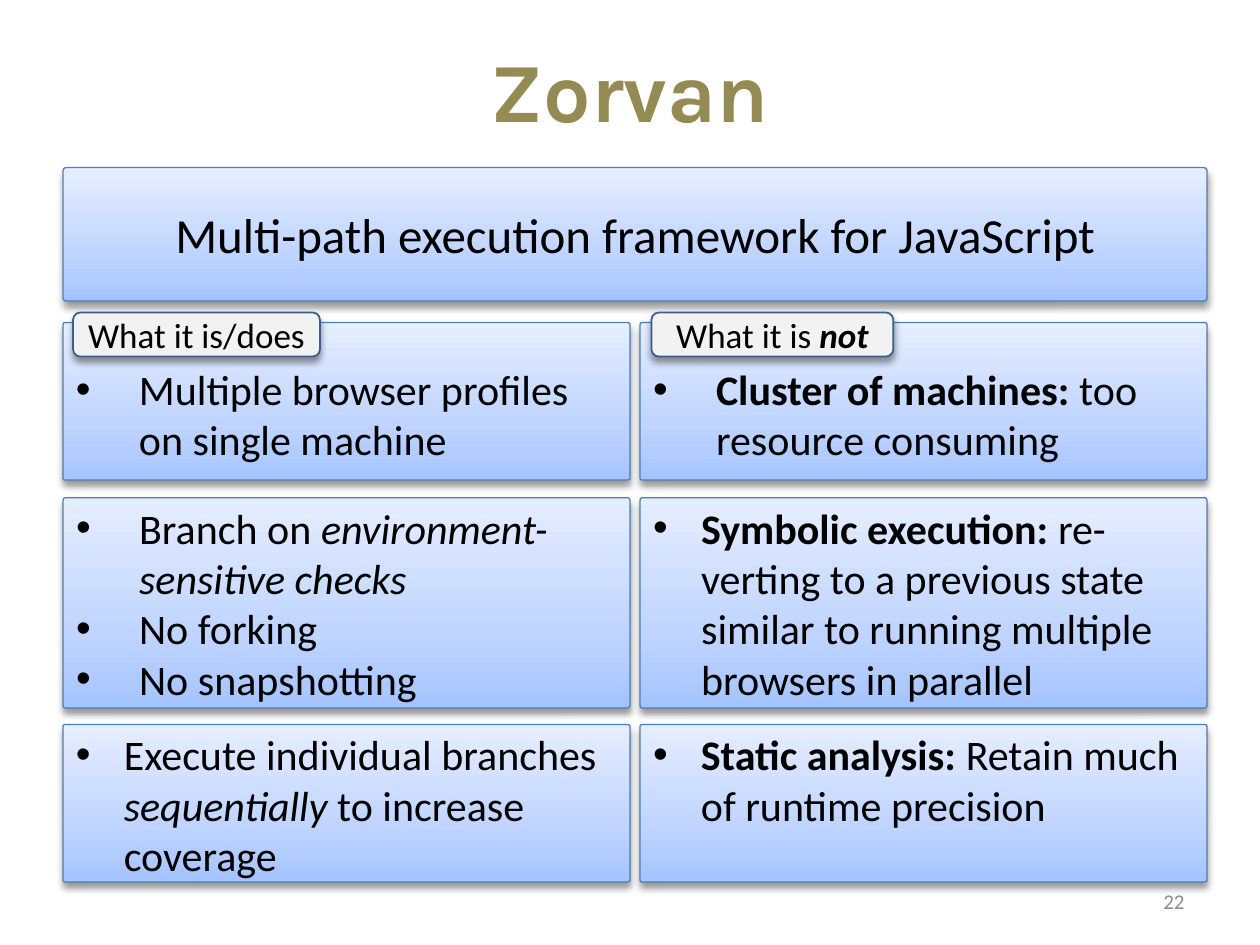
"""Build the Zorvan overview slide: a banner above two columns of cards."""
import pptx
import pptx.dml.color
import pptx.enum.shapes
import pptx.enum.text
import pptx.oxml
import pptx.oxml.ns
import pptx.util

Inches = pptx.util.Inches
Pt = pptx.util.Pt
RGBColor = pptx.dml.color.RGBColor
ALIGN = pptx.enum.text.PP_ALIGN
ANCHOR = pptx.enum.text.MSO_ANCHOR

BLACK = RGBColor(0x00, 0x00, 0x00)
OLIVE = RGBColor(0x94, 0x8A, 0x54)
GRAY = RGBColor(0x8C, 0x8C, 0x8C)
CARD_LINE = RGBColor(0x4B, 0x7E, 0xBC)
TAB_FILL = RGBColor(0xF2, 0xF2, 0xF2)
TAB_LINE = RGBColor(0x3A, 0x5F, 0x8C)
CARD_STOPS = [(0, RGBColor(0xA4, 0xC4, 0xFF)), (35, RGBColor(0xBF, 0xD4, 0xFF)),
              (100, RGBColor(0xE6, 0xEE, 0xFF))]

TITLE = [[("Zorvan", "b")]]
BANNER = [[("Multi-path execution framework for JavaScript", "")]]
TABS = [
    ([[("What it is/does", "")]], 0.58, 1.96),
    ([[("What it is ", ""), ("not", "bi")]], 5.17, 1.92),
]
COLUMN_LEFTS = [0.5, 5.08]
CARD_WIDTH = 4.5
ROWS = [
    {"top": 2.56, "height": 1.25, "inset": 0.3, "cards": [
        (0.5, [[("Multiple browser profiles on single machine", "")]]),
        (0.5, [[("Cluster of machines:", "b"), (" too resource consuming", "")]]),
    ]},
    {"top": 3.95, "height": 1.67, "inset": 0.1, "cards": [
        (0.5, [[("Branch on ", ""), ("environment-sensitive checks", "i")],
               [("No forking", "")],
               [("No snapshotting", "")]]),
        (0.38, [[("Symbolic execution:", "b"),
                 (" re-verting to a previous state similar to running "
                  "multiple browsers in parallel", "")]]),
    ]},
    {"top": 5.75, "height": 1.25, "inset": 0.03, "anchor": ANCHOR.TOP, "cards": [
        (0.38, [[("Execute individual branches ", ""), ("sequentially", "i"),
                 (" to increase coverage", "")]]),
        (0.38, [[("Static analysis:", "b"), (" Retain much of runtime precision", "")]]),
    ]},
]


def parse_drawing(xml):
    namespace = pptx.oxml.ns.nsdecls("a")
    return pptx.oxml.parse_xml(xml.replace(">", f" {namespace}>", 1))


def write_text(shape, paragraphs, size, color=BLACK, font="Calibri", align=ALIGN.CENTER,
               anchor=ANCHOR.MIDDLE, insets=(0.1, 0.05, 0.1, 0.05), indent=None, wrap=True):
    frame = shape.text_frame
    frame.word_wrap = wrap
    frame.vertical_anchor = anchor
    (frame.margin_left, frame.margin_top,
     frame.margin_right, frame.margin_bottom) = map(Inches, insets)
    for index, runs in enumerate(paragraphs):
        paragraph = frame.add_paragraph() if index else frame.paragraphs[0]
        paragraph.alignment = align
        paragraph.font.size = Pt(size)
        paragraph.font.name = font
        paragraph.font.color.rgb = color
        for text, style in runs:
            run = paragraph.add_run()
            run.text = text
            if "b" in style:
                run.font.bold = True
            if "i" in style:
                run.font.italic = True
        if indent:
            properties = paragraph._p.get_or_add_pPr()
            properties.set("marL", str(Inches(indent)))
            properties.set("indent", str(-Inches(indent)))
            bullet_font = parse_drawing('<a:buFont typeface="Arial"></a:buFont>')
            bullet = parse_drawing('<a:buChar char="•"></a:buChar>')
            properties.insert_element_before(bullet_font, "a:defRPr")
            properties.insert_element_before(bullet, "a:defRPr")


def add_box(slide, left, top, width, height, line_color, line_width):
    shape = slide.shapes.add_shape(
        pptx.enum.shapes.MSO_SHAPE.ROUNDED_RECTANGLE,
        Inches(left), Inches(top), Inches(width), Inches(height))
    shape.line.color.rgb = line_color
    shape.line.width = Pt(line_width)
    shape.shadow.inherit = False
    effects = shape._element.spPr.find(pptx.oxml.ns.qn("a:effectLst"))
    effects.append(parse_drawing(
        f'<a:outerShdw blurRad="{Pt(4)}" dist="{Pt(3)}" dir="5400000" rotWithShape="0">'
        '<a:srgbClr val="000000"><a:alpha val="40000"/></a:srgbClr></a:outerShdw>'))
    return shape


def add_card(slide, left, top, width, height, rounding):
    shape = add_box(slide, left, top, width, height, CARD_LINE, 0.75)
    shape.adjustments[0] = rounding
    shape.fill.gradient()
    shape.fill.gradient_angle = 90
    stops = shape._element.spPr.find(".//" + pptx.oxml.ns.qn("a:gsLst"))
    for stop in list(stops):
        stops.remove(stop)
    for position, color in CARD_STOPS:
        stops.append(parse_drawing(
            f'<a:gs pos="{position * 1000}"><a:srgbClr val="{color}"/></a:gs>'))
    return shape


def add_label(slide, left, top, width, height):
    return slide.shapes.add_textbox(Inches(left), Inches(top), Inches(width), Inches(height))


def main():
    presentation = pptx.Presentation()
    presentation.slide_width = Inches(10)
    presentation.slide_height = Inches(7.5)
    slide = presentation.slides.add_slide(presentation.slide_layouts[6])

    title = add_label(slide, 0.5, 0.08, 9, 1.25)
    write_text(title, TITLE, 48, OLIVE, "Karla")

    banner = add_card(slide, 0.5, 1.33, 9.08, 1.06, 0.025)
    write_text(banner, BANNER, 28, insets=(0.1, 0.1, 0.1, 0.1))

    for row in ROWS:
        for left, (indent, paragraphs) in zip(COLUMN_LEFTS, row["cards"]):
            card = add_card(slide, left, row["top"], CARD_WIDTH, row["height"], 0.013)
            write_text(card, paragraphs, 24, align=ALIGN.LEFT, indent=indent,
                       anchor=row.get("anchor", ANCHOR.MIDDLE),
                       insets=(0.1, row["inset"], 0.1, 0.1))

    for paragraphs, left, width in TABS:
        tab = add_box(slide, left, 2.48, width, 0.35, TAB_LINE, 1)
        tab.fill.solid()
        tab.fill.fore_color.rgb = TAB_FILL
        write_text(tab, paragraphs, 20, wrap=False)

    number = add_label(slide, 7.17, 6.95, 2.33, 0.4)
    write_text(number, [[("22", "")]], 12, GRAY, align=ALIGN.RIGHT)

    presentation.save("out.pptx")


if __name__ == "__main__":
    main()
